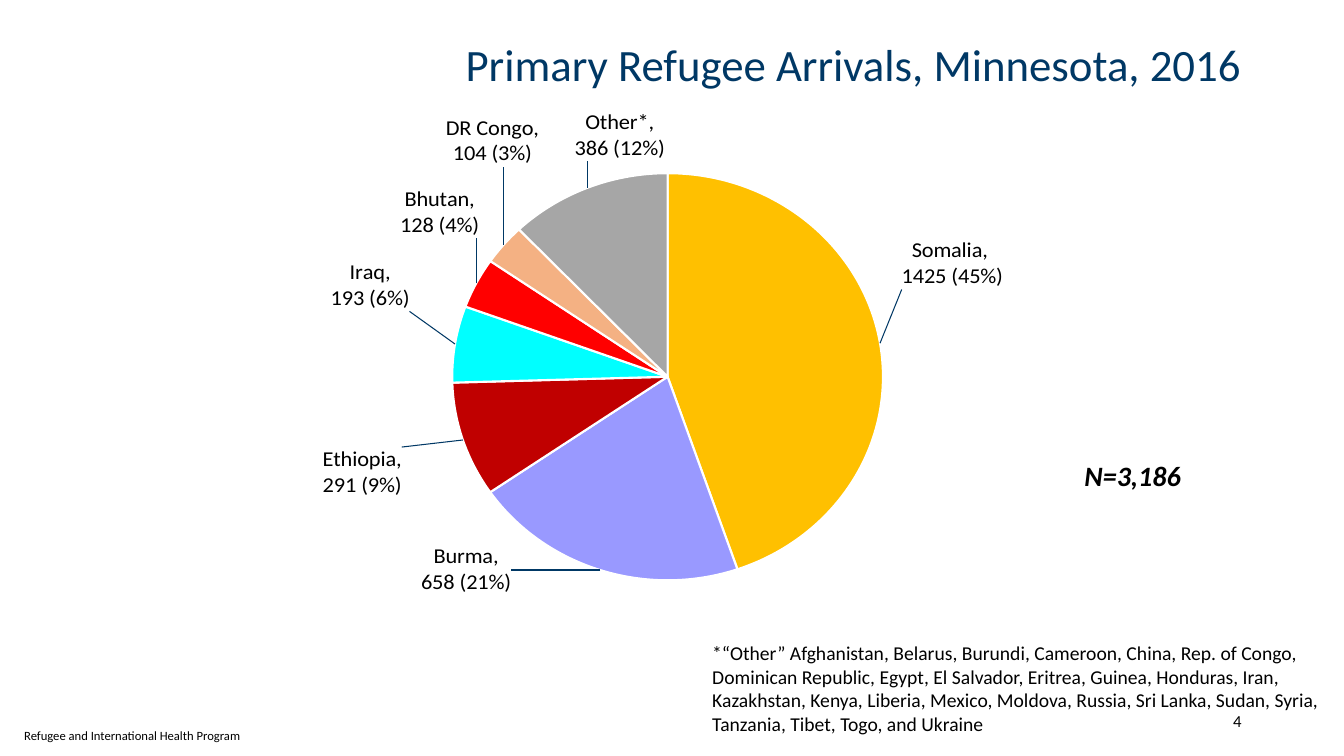
import lxml.etree
import pptx
import pptx.chart.data
import pptx.dml.color
import pptx.enum.chart
import pptx.enum.text
import pptx.oxml
import pptx.oxml.ns
import pptx.util

Cm = pptx.util.Cm
Pt = pptx.util.Pt
qn = pptx.oxml.ns.qn
ALIGN = pptx.enum.text.PP_ALIGN
ANCHOR = pptx.enum.text.MSO_ANCHOR

FONT = "Calibri"
COLORS = {"navy": "003865", "black": "000000", "white": "FFFFFF"}

# Country: arrivals, slice colour, label text, label shift as fractions of the chart
ARRIVALS = {
    "Somalia": (1425, "FFC000", "Somalia, \n1425 (45%)", (0.02, -0.1)),
    "Burma": (658, "9999FF", "Burma,\n658 (21%)", (-0.11, -0.06)),
    "Ethiopia": (291, "C00000", "Ethiopia,\n291 (9%)", (-0.07, 0.01)),
    "Iraq": (193, "00FFFF", "Iraq,\n193 (6%)", (-0.05, -0.06)),
    "Bhutan": (128, "FF0000", "Bhutan,\n128 (4%)", (0.01, -0.08)),
    "DR Congo": (104, "F4B183", "DR Congo,\n104 (3%)", (0.05, -0.14)),
    "Other*": (386, "A6A6A6", "Other*,\n386 (12%)", (0.1, -0.04)),
}
PIE = {"layoutTarget": "inner", "xMode": "edge", "yMode": "edge",
       "x": 0.22, "y": 0.2, "w": 0.55, "h": 0.77}

OTHER_NOTE = (
    "*“Other” Afghanistan, Belarus, Burundi, Cameroon, China, Rep. of Congo, "
    "Dominican Republic, Egypt, El Salvador, Eritrea, Guinea, Honduras, Iran, "
    "Kazakhstan, Kenya, Liberia, Mexico, Moldova, Russia, Sri Lanka, Sudan, Syria, "
    "Tanzania, Tibet, Togo, and Ukraine"
)


def rgb(color):
    return pptx.dml.color.RGBColor.from_string(color)


def style_font(font, size, color, **extra):
    for name, value in {"name": FONT, "size": Pt(size), **extra}.items():
        setattr(font, name, value)
    font.color.rgb = rgb(color)


def add_title(slide, box, text):
    title = slide.shapes.title
    for name, value in zip(("left", "top", "width", "height"), box):
        setattr(title, name, Cm(value))
    title.text_frame.text = text
    title.text_frame.vertical_anchor = ANCHOR.MIDDLE
    line = title.text_frame.paragraphs[0]
    line.alignment = ALIGN.RIGHT
    line.line_spacing = 0.9
    style_font(line.runs[0].font, 32, COLORS["navy"], bold=False)


def add_note(slide, box, text, size, align=ALIGN.LEFT, anchor=ANCHOR.TOP, **extra):
    frame = slide.shapes.add_textbox(*map(Cm, box)).text_frame
    frame.word_wrap = True
    frame.vertical_anchor = anchor
    frame.text = text
    frame.paragraphs[0].alignment = align
    style_font(frame.paragraphs[0].runs[0].font, size, COLORS["black"], **extra)


def add_layout(parent, values, index):
    """Insert a manual layout into a chart part."""
    for old in parent.findall(qn("c:layout")):
        parent.remove(old)
    layout = lxml.etree.Element(qn("c:layout"))
    manual = lxml.etree.SubElement(layout, qn("c:manualLayout"))
    for name, value in values.items():
        lxml.etree.SubElement(manual, qn(f"c:{name}")).set("val", str(value))
    parent.insert(index, layout)


def add_arrivals_pie(slide, box):
    data = pptx.chart.data.CategoryChartData(number_format="0")
    data.categories = list(ARRIVALS)
    data.add_series("Series 1", [row[0] for row in ARRIVALS.values()])
    chart = slide.shapes.add_chart(
        pptx.enum.chart.XL_CHART_TYPE.PIE, *map(Cm, box), data).chart
    chart.has_legend = False
    chart.has_title = False
    style_font(chart.font, 10, COLORS["navy"])
    pie = chart.plots[0]
    pie.vary_by_categories = True
    series = pie.series[0]

    # Shared label format
    labels = series.data_labels
    style_font(labels.font, 16, COLORS["black"], bold=True)
    for name in ("show_value", "show_percentage", "show_category_name"):
        setattr(labels, name, True)

    # Slices and their labels
    for index, (_, color, text, _) in enumerate(ARRIVALS.values()):
        point = series.points[index]
        point.format.fill.solid()
        point.format.fill.fore_color.rgb = rgb(color)
        point.format.line.color.rgb = rgb(COLORS["white"])
        point.format.line.width = Pt(1.5)
        label = point.data_label
        label.text_frame.text = text
        for line in label.text_frame.paragraphs:
            style_font(line.runs[0].font, 16, COLORS["black"], bold=False)
        label.position = pptx.enum.chart.XL_LABEL_POSITION.OUTSIDE_END

    # Label places, leader lines and plot area
    label_list = labels._element
    for label, row in zip(label_list.findall(qn("c:dLbl")), ARRIVALS.values()):
        add_layout(label, dict(zip("xy", row[3])), 1)
        for flag in ("c:showCatName", "c:showPercent"):
            label.find(qn(flag)).set("val", "1")
    for leader in label_list.findall(qn("c:leaderLines")):
        label_list.remove(leader)
    label_list.append(pptx.oxml.parse_xml(
        f'<c:leaderLines {pptx.oxml.ns.nsdecls("c", "a")}><c:spPr><a:ln w="9525">'
        f'<a:solidFill><a:srgbClr val="{COLORS["navy"]}"/></a:solidFill>'
        '</a:ln></c:spPr></c:leaderLines>'))
    add_layout(chart._chartSpace.find(".//" + qn("c:plotArea")), PIE, 0)


def main():
    deck = pptx.Presentation()
    deck.slide_width, deck.slide_height = Cm(33.87), Cm(19.05)
    slide = deck.slides.add_slide(deck.slide_layouts[5])

    add_title(slide, (2.34, 0.43, 29.21, 2.54), "Primary Refugee Arrivals, Minnesota, 2016")
    # Slide number, total, footnote and footer
    add_note(slide, (27.48, 17.65, 4.06, 1.02), "4", 12, ALIGN.RIGHT, ANCHOR.MIDDLE)
    add_note(slide, (27.08, 11.43, 3.61, 1.09), "N=3,186", 20, bold=True, italic=True)
    add_note(slide, (17.7, 16.03, 16.15, 2.64), OTHER_NOTE, 14)
    add_note(slide, (0.36, 18.21, 5.99, 0.64), "Refugee and International Health Program", 9)
    add_arrivals_pie(slide, (6.93, 1.7, 19.99, 14.1))

    deck.save("out.pptx")


if __name__ == "__main__":
    main()
